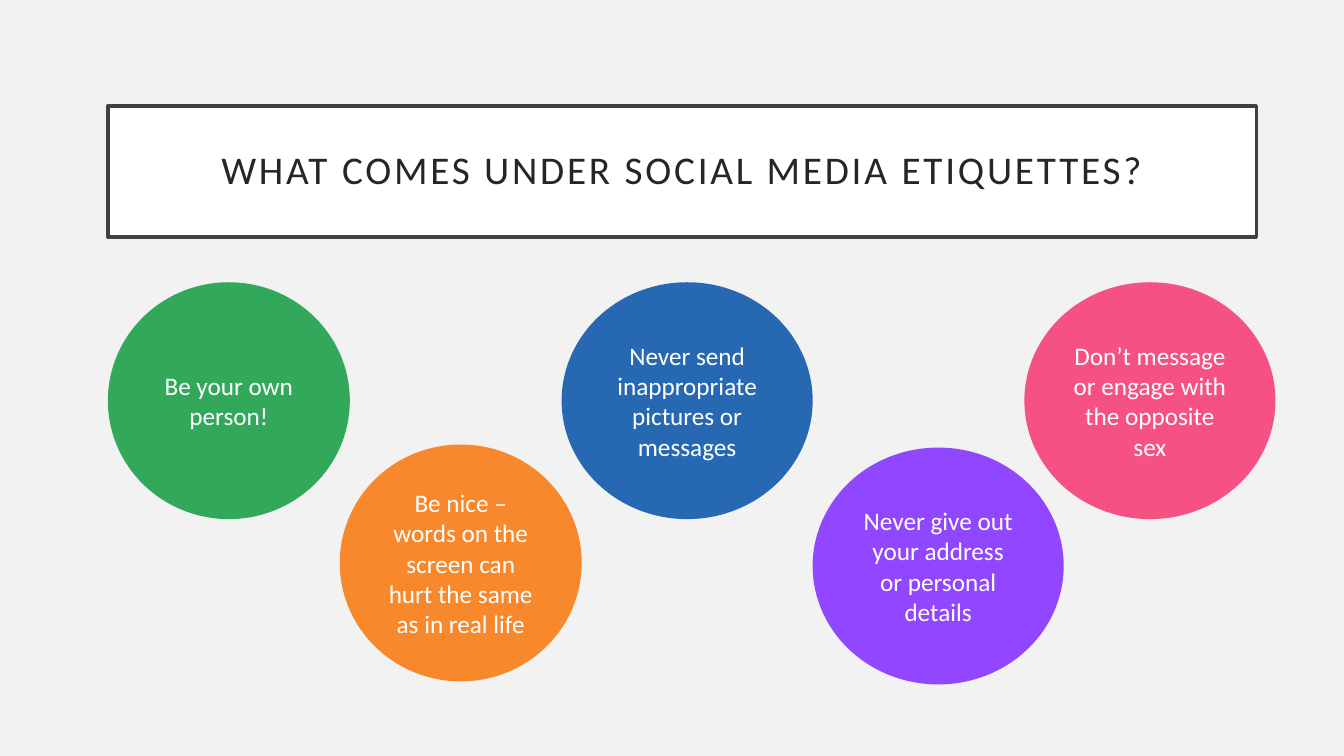
from pptx import Presentation
from pptx.dml.color import RGBColor
from pptx.enum.shapes import MSO_SHAPE as Shape
from pptx.enum.text import MSO_ANCHOR as Anchor, PP_ALIGN as Align
from pptx.util import Inches, Pt

BACKGROUND = RGBColor(0xF2, 0xF2, 0xF2)
WHITE = RGBColor(0xFF, 0xFF, 0xFF)
BORDER = RGBColor(0x40, 0x40, 0x40)
TITLE_INK = RGBColor(0x26, 0x26, 0x26)
GREEN = RGBColor(0x32, 0xA8, 0x5A)
ORANGE = RGBColor(0xF7, 0x88, 0x2C)
BLUE = RGBColor(0x27, 0x68, 0xB2)
PURPLE = RGBColor(0x91, 0x47, 0xFF)
PINK = RGBColor(0xF5, 0x51, 0x83)

MARGIN = 1.07
UPPER_ROW = 2.8
CIRCLE_HEIGHT = 2.35
NARROW, WIDE = 2.4, 2.49

deck = Presentation()
deck.slide_width, deck.slide_height = Inches(13.33), Inches(7.5)
page = deck.slides.add_slide(deck.slide_layouts[6])
page.background.fill.solid()
page.background.fill.fore_color.rgb = BACKGROUND


def add_text_shape(kind, left, top, width, height, fill, text, size, ink):
    box = page.shapes.add_shape(
        kind, Inches(left), Inches(top), Inches(width), Inches(height))
    box.shadow.inherit = False
    box.fill.solid()
    box.fill.fore_color.rgb = fill
    box.line.fill.background()
    frame = box.text_frame
    frame.word_wrap = True
    frame.vertical_anchor = Anchor.MIDDLE
    para = frame.paragraphs[0]
    para.text = text
    para.alignment = Align.CENTER
    para.font.name = "Calibri"
    para.font.size = Pt(size)
    para.font.color.rgb = ink
    return box


title = add_text_shape(
    Shape.RECTANGLE, MARGIN, 1.05, 11.39, 1.3, WHITE,
    "WHAT COMES UNDER SOCIAL MEDIA ETIQUETTES?", 28, TITLE_INK)
title.line.color.rgb = BORDER
title.line.width = Pt(2.5)
frame = title.text_frame
frame.margin_left = frame.margin_right = Inches(0.2)
frame.margin_top = frame.margin_bottom = Inches(0.2)
para = frame.paragraphs[0]
para.line_spacing = 0.9
para.runs[0].font._element.set("spc", "200")

rules = [
    (MARGIN, UPPER_ROW, NARROW, GREEN, "Be your own person!"),
    (5.57, UPPER_ROW, WIDE, BLUE, "Never send inappropriate pictures or messages"),
    (10.16, UPPER_ROW, WIDE, PINK, "Don’t message or engage with the opposite sex"),
    (3.37, 4.41, NARROW, ORANGE,
     "Be nice – words on the screen can hurt the same as in real life"),
    (8.06, 4.44, WIDE, PURPLE, "Never give out your address or personal details"),
]
for left, top, width, colour, text in rules:
    add_text_shape(
        Shape.OVAL, left, top, width, CIRCLE_HEIGHT, colour, text, 18, WHITE)

deck.save("out.pptx")
